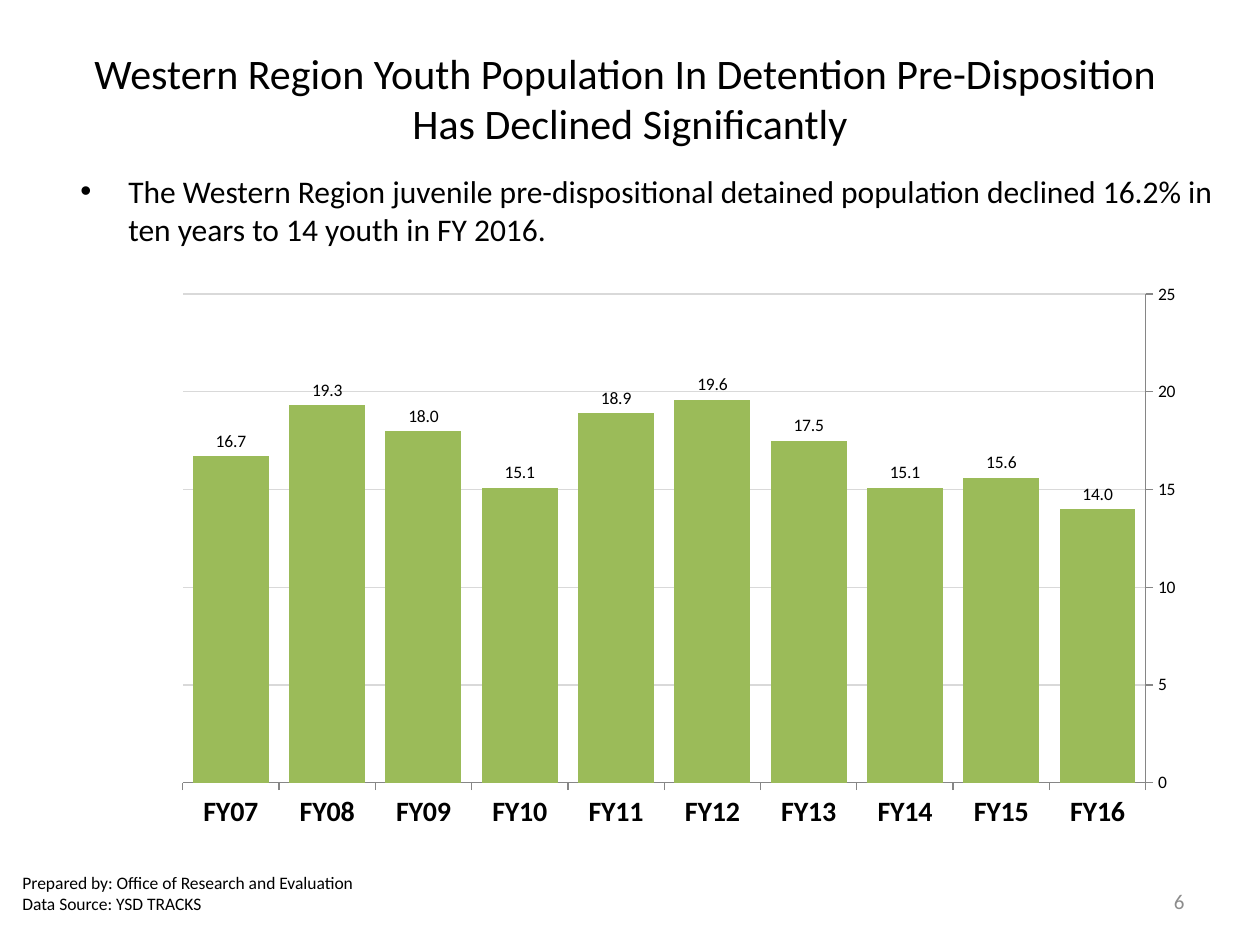
from lxml.etree import SubElement as Sub
from pptx import Presentation
from pptx.chart.data import CategoryChartData as Data
from pptx.dml.color import RGBColor as RGB
from pptx.enum.chart import (
    XL_AXIS_CROSSES as Cross,
    XL_CHART_TYPE as Kind,
    XL_LABEL_POSITION as Spot,
    XL_TICK_MARK as Tick,
)
from pptx.enum.text import MSO_ANCHOR as Anchor, PP_ALIGN as Align
from pptx.oxml.ns import qn
from pptx.util import Inches, Pt

WIDE, HIGH = 10, 7.5
FONT = "Calibri"
INK = {"text": "000000", "page": "8C8C8C", "bar": "9BBB59",
       "grid": "D9D9D9", "axis": "868686"}
YEARS = [f"FY{n:02}" for n in range(16, 6, -1)]
YOUTH = [14, 15.6, 15.1, 17.5, 19.6, 18.9, 15.1, 18, 19.3, 16.7]
PLOT = {"x": 0.073, "y": 0.055, "w": 0.9, "h": 0.83}


def ink(name):
    return RGB.from_string(INK[name])


def box(x, y, w, h):
    """Turn shares of the slide's size into lengths."""
    return [Inches(v) for v in (x * WIDE, y * HIGH, w * WIDE, h * HIGH)]


def style(font, size, color="text", bold=False):
    font.name, font.size, font.bold = FONT, Pt(size), bold
    font.color.rgb = ink(color)


def write(shape, text, size=18, color="text", align=Align.LEFT, bullet=False):
    frame = shape.text_frame
    frame.word_wrap = True
    frame.vertical_anchor = Anchor.MIDDLE
    frame.text = text
    for para in frame.paragraphs:
        para.alignment = align
        for run in para.runs:
            style(run.font, size, color)
        if bullet:
            props = para._p.get_or_add_pPr()
            props.set("marL", str(Inches(0.38)))
            props.set("indent", str(-Inches(0.38)))
            Sub(props, qn("a:buFont"), typeface="Arial")
            Sub(props, qn("a:buChar"), char="•")


def note(slide, area, text, **form):
    write(slide.shapes.add_textbox(*box(*area)), text, **form)


def head(slide, area, text, **form):
    title = slide.shapes.title
    title.left, title.top, title.width, title.height = box(*area)
    write(title, text, **form)


def place(chart):
    """Fix the inner plot area by shares of the chart's size."""
    area = chart._chartSpace.chart.plotArea
    for old in area.findall(qn("c:layout")):
        area.remove(old)
    frame = Sub(area, qn("c:layout"))
    area.insert(0, frame)
    spot = Sub(frame, qn("c:manualLayout"))
    Sub(spot, qn("c:layoutTarget"), val="inner")
    for side in "xy":
        Sub(spot, qn(f"c:{side}Mode"), val="edge")
    for side, share in PLOT.items():
        Sub(spot, qn(f"c:{side}"), val=str(share))


def bars(slide, area):
    data = Data(number_format="0.0")
    data.categories = YEARS
    data.add_series("Youth", YOUTH)
    chart = slide.shapes.add_chart(
        Kind.COLUMN_CLUSTERED, *box(*area), data).chart
    chart.has_title = chart.has_legend = False
    style(chart.font, 10)
    place(chart)

    # Columns and their values
    plot = chart.plots[0]
    plot.gap_width, plot.vary_by_categories = 27, False
    fill = plot.series[0].format.fill
    fill.solid()
    fill.fore_color.rgb = ink("bar")
    plot.has_data_labels = True
    labels = plot.data_labels
    labels.show_value, labels.position = True, Spot.OUTSIDE_END
    labels.number_format, labels.number_format_is_linked = "0.0", False
    style(labels.font, 10)

    # Axes: newest year comes first in the data, last on the chart
    years, count = chart.category_axis, chart.value_axis
    for axis, size, bold in ((years, 16, True), (count, 10, False)):
        axis.major_tick_mark, axis.minor_tick_mark = Tick.OUTSIDE, Tick.NONE
        axis.format.line.color.rgb = ink("axis")
        style(axis.tick_labels.font, size, bold=bold)
    years.reverse_order = True
    years.crosses = Cross.MAXIMUM
    count.minimum_scale, count.maximum_scale, count.major_unit = 0, 25, 5
    count.tick_labels.number_format = "0"
    count.tick_labels.number_format_is_linked = False
    grid = count.major_gridlines.format.line
    grid.color.rgb, grid.width = ink("grid"), Pt(0.75)


def main():
    deck = Presentation()
    deck.slide_width, deck.slide_height = Inches(WIDE), Inches(HIGH)
    slide = deck.slides.add_slide(deck.slide_layouts[5])

    # Title and message
    head(slide, (0.05, 0.04, 0.9, 0.127),
         "Western Region Youth Population In Detention Pre-Disposition "
         "\vHas Declined Significantly", size=24, align=Align.CENTER)
    note(slide, (0.054, 0.144, 0.929, 0.156),
         "The Western Region juvenile pre-dispositional detained population "
         "declined 16.2% in ten years to 14 youth in FY 2016.", bullet=True)

    # Chart
    bars(slide, (0.083, 0.277, 0.85, 0.623))

    # Source and page number
    note(slide, (0.008, 0.911, 0.292, 0.069),
         "Prepared by: Office of Research and Evaluation\n"
         "Data Source: YSD TRACKS", size=10)
    note(slide, (0.717, 0.927, 0.233, 0.053), "6",
         size=12, color="page", align=Align.RIGHT)
    deck.save("out.pptx")


if __name__ == "__main__":
    main()
